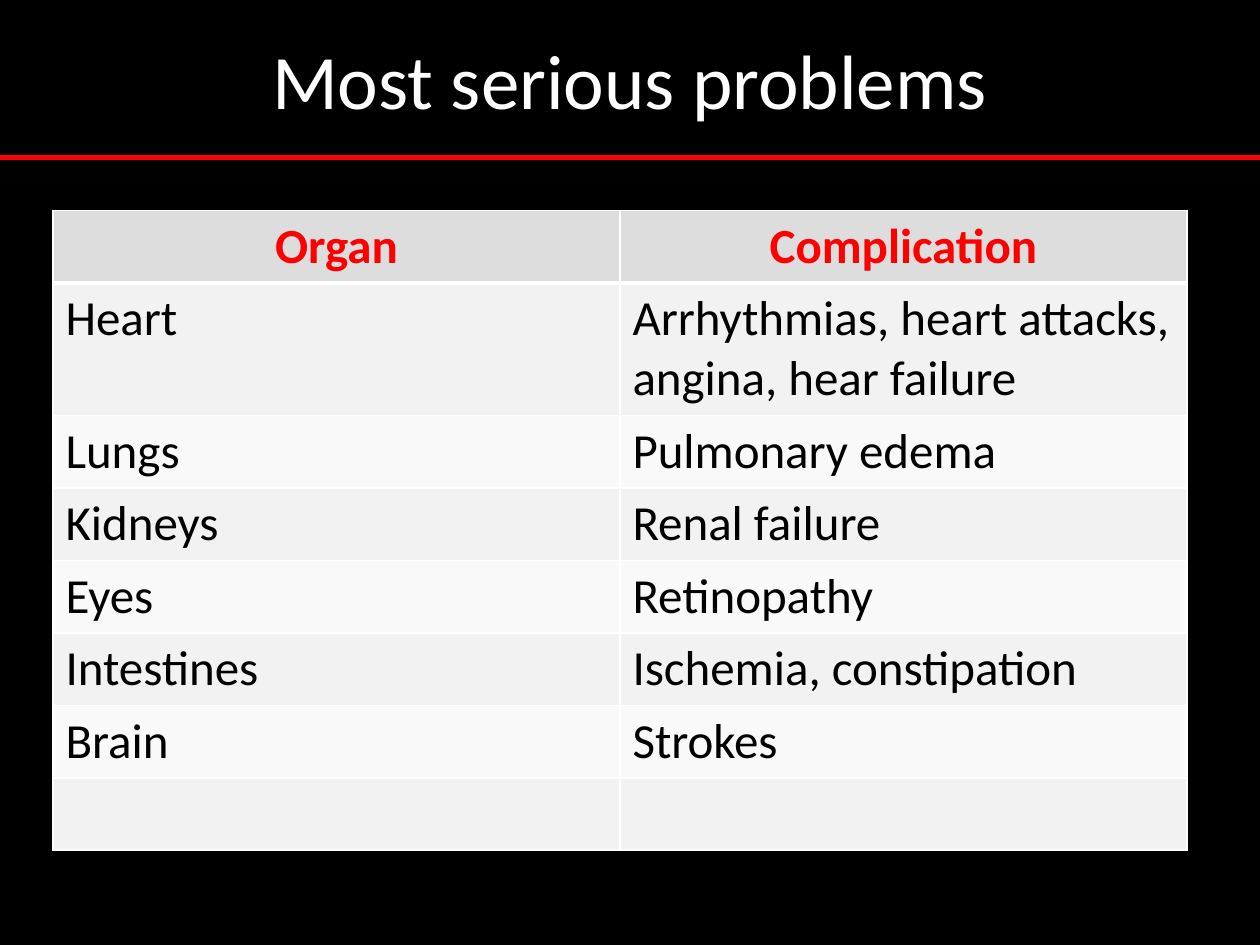
"""Build the slide on the most serious problems, organ by organ."""
import pptx
import pptx.dml.color
import pptx.enum.shapes
import pptx.enum.text
import pptx.oxml
import pptx.oxml.ns
import pptx.util

Inches = pptx.util.Inches
Pt = pptx.util.Pt
ALIGN = pptx.enum.text.PP_ALIGN

COLORS = {
    "background": "000000",
    "title": "FFFFFF",
    "accent": "FF0000",
    "text": "000000",
    "header": "DDDDDD",
    "odd": "F2F2F2",
    "even": "F9F9F9",
    "border": "FFFFFF",
}
FORMATS = {
    "title": {"size": Pt(44), "name": "Calibri", "bold": False},
    "header": {"size": Pt(28), "name": "Calibri", "bold": True},
    "body": {"size": Pt(28), "name": "Calibri", "bold": False},
}
ROWS = [
    ("Organ", "Complication"),
    ("Heart", "Arrhythmias, heart attacks, angina, hear failure"),
    ("Lungs", "Pulmonary edema"),
    ("Kidneys", "Renal failure"),
    ("Eyes", "Retinopathy"),
    ("Intestines", "Ischemia, constipation"),
    ("Brain", "Strokes"),
    ("", ""),
]


def rgb(name):
    return pptx.dml.color.RGBColor.from_string(COLORS[name])


def write(para, text, style, color, align):
    para.alignment = align
    span = para.add_run()
    span.text = text
    for key, value in FORMATS[style].items():
        setattr(span.font, key, value)
    span.font.color.rgb = rgb(color)


deck = pptx.Presentation()
deck.slide_width, deck.slide_height = Inches(10), Inches(7.5)
page = deck.slides.add_slide(deck.slide_layouts[5])
page.background.fill.solid()
page.background.fill.fore_color.rgb = rgb("background")

title = page.shapes.title
title.left, title.top = Inches(0.5), Inches(0)
title.width, title.height = Inches(9), Inches(1.25)
title.text_frame.vertical_anchor = pptx.enum.text.MSO_ANCHOR.MIDDLE
write(title.text_frame.paragraphs[0], "Most serious problems", "title", "title", ALIGN.CENTER)

table = page.shapes.add_table(
    len(ROWS), 2, Inches(0.42), Inches(1.67), Inches(9), Inches(5)
).table
for row_index, texts in enumerate(ROWS):
    is_header = row_index == 0
    table.rows[row_index].height = Inches(1.04 if texts[0] == "Heart" else 0.57)
    band = "header" if is_header else ("odd" if row_index % 2 else "even")
    style, color, align = (
        ("header", "accent", ALIGN.CENTER) if is_header else ("body", "text", ALIGN.LEFT)
    )
    widths = {"lnL": 1, "lnR": 1, "lnT": 3 if row_index == 1 else 1, "lnB": 3 if is_header else 1}
    for column_index, text in enumerate(texts):
        cell = table.cell(row_index, column_index)
        cell.fill.solid()
        cell.fill.fore_color.rgb = rgb(band)
        if text:
            write(cell.text_frame.paragraphs[0], text, style, color, align)
        properties = cell._tc.get_or_add_tcPr()
        for position, (side, width) in enumerate(widths.items()):
            border = pptx.oxml.parse_xml(
                f'<a:{side} {pptx.oxml.ns.nsdecls("a")} w="{Pt(width)}"><a:solidFill>'
                f'<a:srgbClr val="{COLORS["border"]}"/></a:solidFill></a:{side}>'
            )
            properties.insert(position, border)

rule = page.shapes.add_connector(
    pptx.enum.shapes.MSO_CONNECTOR.STRAIGHT, Inches(0), Inches(1.25), Inches(10), Inches(1.25)
)
rule.line.color.rgb = rgb("accent")
rule.line.width = Pt(3)
rule._element.spPr.append(pptx.oxml.parse_xml(f'<a:effectLst {pptx.oxml.ns.nsdecls("a")}/>'))

deck.save("out.pptx")
